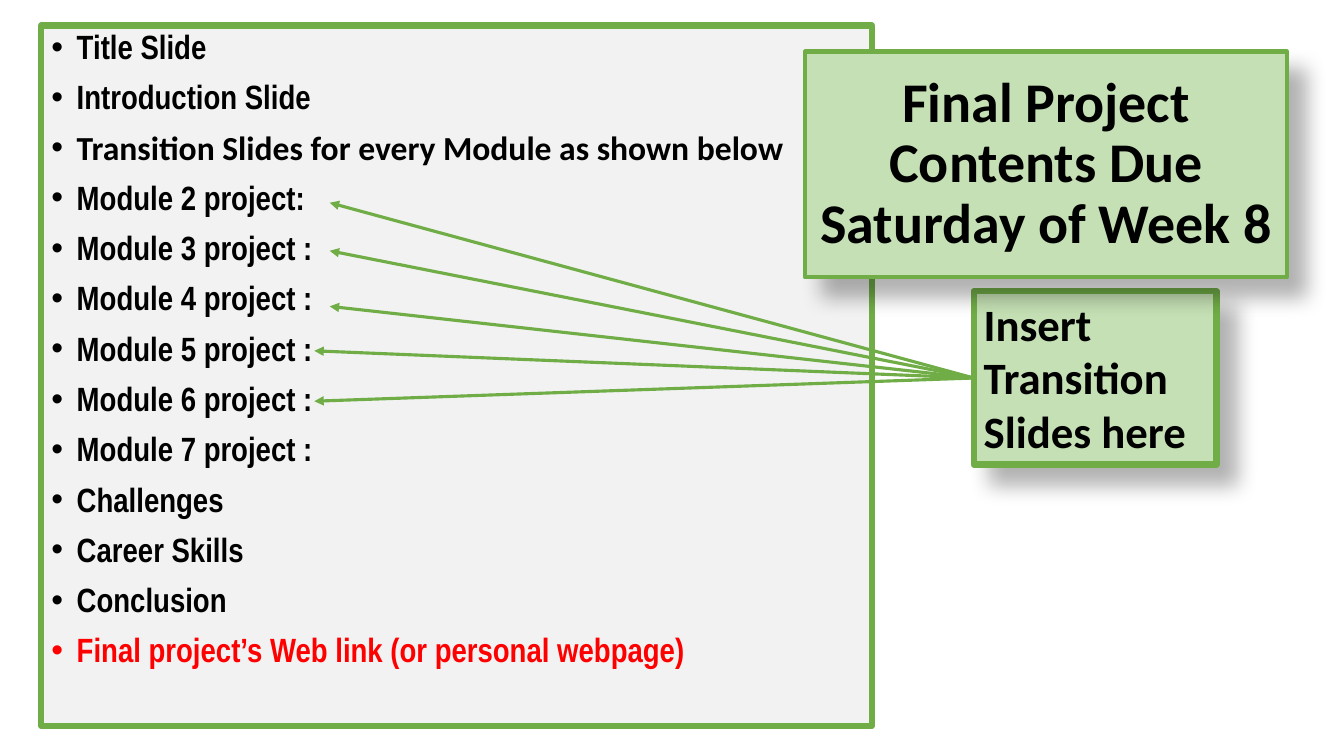
from dataclasses import dataclass

from lxml.etree import SubElement
from pptx import Presentation
from pptx.dml.color import RGBColor
from pptx.enum.shapes import MSO_CONNECTOR, MSO_SHAPE
from pptx.enum.text import MSO_ANCHOR, MSO_AUTO_SIZE, PP_ALIGN
from pptx.oxml.ns import qn
from pptx.util import Cm, Pt


@dataclass(frozen=True)
class Theme:
    green: RGBColor = RGBColor(0x70, 0xAD, 0x47)
    pale_green: RGBColor = RGBColor(0xC5, 0xE0, 0xB4)
    panel: RGBColor = RGBColor(0xF2, 0xF2, 0xF2)
    ink: RGBColor = RGBColor(0, 0, 0)
    alert: RGBColor = RGBColor(0xFF, 0, 0)
    main_font: str = "Calibri"
    list_font: str = "Arial Narrow"
    title_size: Pt = Pt(40)
    note_size: Pt = Pt(32)
    list_size: Pt = Pt(24)
    thick: Pt = Pt(4.5)
    medium: Pt = Pt(3)
    thin: Pt = Pt(2.25)


THEME = Theme()

# Left, top, width, height in centimetres
CONTENTS_BOX = (1.04, 0.64, 20.93, 17.65)
NOTE_BOX = (24.54, 7.34, 6.12, 4.37)
TITLE_BOX = (20.29, 1.3, 12.14, 5.69)

TRANSITIONS = "Transition Slides for every Module as shown below"
WEB_LINK = "Final project’s Web link (or personal webpage)"
CONTENTS = [
    "Title Slide",
    "Introduction Slide",
    TRANSITIONS,
    "Module 2 project:",
    *(f"Module {number} project :" for number in range(3, 8)),
    "Challenges",
    "Career Skills",
    "Conclusion",
    WEB_LINK,
]

# Arrow tips beside modules 2 to 6, measured from the contents box corner
ARROW_TIPS = [(7.27, 4.47), (7.27, 5.68), (7.27, 7.08), (6.88, 8.2), (6.88, 9.47)]


def place(shape, box):
    shape.left, shape.top, shape.width, shape.height = map(Cm, box)


def paint(shape, fill, line_width):
    shape.fill.solid()
    shape.fill.fore_color.rgb = fill
    shape.line.color.rgb = THEME.green
    shape.line.width = line_width


def style_runs(paragraph, size, font=THEME.main_font, color=THEME.ink):
    for run in paragraph.runs:
        run.font.name = font
        run.font.size = size
        run.font.bold = True
        run.font.color.rgb = color


def cast_shadow(shape):
    """Give the shape a soft shadow to its lower right."""
    shape.shadow.inherit = False
    effects = shape._element.spPr.find(qn("a:effectLst"))
    shadow = SubElement(effects, qn("a:outerShdw"), blurRad=str(Pt(15)),
                        dist=str(Pt(18)), dir="2700000", algn="tl", rotWithShape="0")
    black = SubElement(shadow, qn("a:srgbClr"), val=str(THEME.ink))
    SubElement(black, qn("a:alpha"), val="30000")


def add_bullet(paragraph):
    properties = paragraph._p.get_or_add_pPr()
    properties.set("marL", str(Cm(0.64)))
    properties.set("indent", str(-Cm(0.64)))
    SubElement(properties, qn("a:buFont"), typeface="Arial")
    SubElement(properties, qn("a:buChar"), char="•")


def fill_contents(contents, box):
    place(contents, box)
    paint(contents, THEME.panel, THEME.thick)
    frame = contents.text_frame
    frame.text = "\n".join(CONTENTS)
    frame.auto_size = MSO_AUTO_SIZE.NONE
    frame.vertical_anchor = MSO_ANCHOR.TOP
    for index, entry in enumerate(frame.paragraphs):
        add_bullet(entry)
        entry.line_spacing = 0.9
        entry.space_before = Pt(10 if index else 0)
        style_runs(entry, THEME.list_size,
                   THEME.main_font if entry.text == TRANSITIONS else THEME.list_font,
                   THEME.alert if entry.text == WEB_LINK else THEME.ink)


def add_note(slide, box):
    note = slide.shapes.add_shape(MSO_SHAPE.RECTANGLE, *map(Cm, box))
    paint(note, THEME.pale_green, THEME.thick)
    cast_shadow(note)
    frame = note.text_frame
    frame.text = "Insert Transition Slides here"
    frame.word_wrap = True
    frame.auto_size = MSO_AUTO_SIZE.SHAPE_TO_FIT_TEXT
    frame.vertical_anchor = MSO_ANCHOR.TOP
    frame.paragraphs[0].alignment = PP_ALIGN.LEFT
    style_runs(frame.paragraphs[0], THEME.note_size)
    return note


def add_arrows(slide, note, box):
    """Point from the left side of the note to the module lines in the box."""
    left, top = box[:2]
    for across, down in ARROW_TIPS:
        arrow = slide.shapes.add_connector(
            MSO_CONNECTOR.STRAIGHT, note.left, note.top + note.height // 2,
            Cm(left + across), Cm(top + down))
        arrow.begin_connect(note, 1)
        arrow.line.color.rgb = THEME.green
        arrow.line.width = THEME.thin
        properties = arrow._element.spPr
        SubElement(properties.find(qn("a:ln")), qn("a:tailEnd"), type="triangle")
        SubElement(properties, qn("a:effectLst"))


def fill_title(slide, box):
    """Fill the title and bring it in front of the contents panel."""
    title = slide.shapes.title
    place(title, box)
    paint(title, THEME.pale_green, THEME.medium)
    cast_shadow(title)
    frame = title.text_frame
    frame.text = "Final Project Contents Due Saturday of Week 8"
    frame.word_wrap = True
    frame.auto_size = MSO_AUTO_SIZE.NONE
    frame.vertical_anchor = MSO_ANCHOR.MIDDLE
    heading = frame.paragraphs[0]
    heading.alignment = PP_ALIGN.CENTER
    heading.line_spacing = 0.9
    style_runs(heading, THEME.title_size)
    slide.shapes._spTree.append(title._element)


def main():
    presentation = Presentation()
    presentation.slide_width = Cm(33.87)
    presentation.slide_height = Cm(19.05)
    slide = presentation.slides.add_slide(presentation.slide_layouts[1])
    fill_contents(slide.placeholders[1], CONTENTS_BOX)
    note = add_note(slide, NOTE_BOX)
    add_arrows(slide, note, CONTENTS_BOX)
    fill_title(slide, TITLE_BOX)
    presentation.save("out.pptx")


if __name__ == "__main__":
    main()
